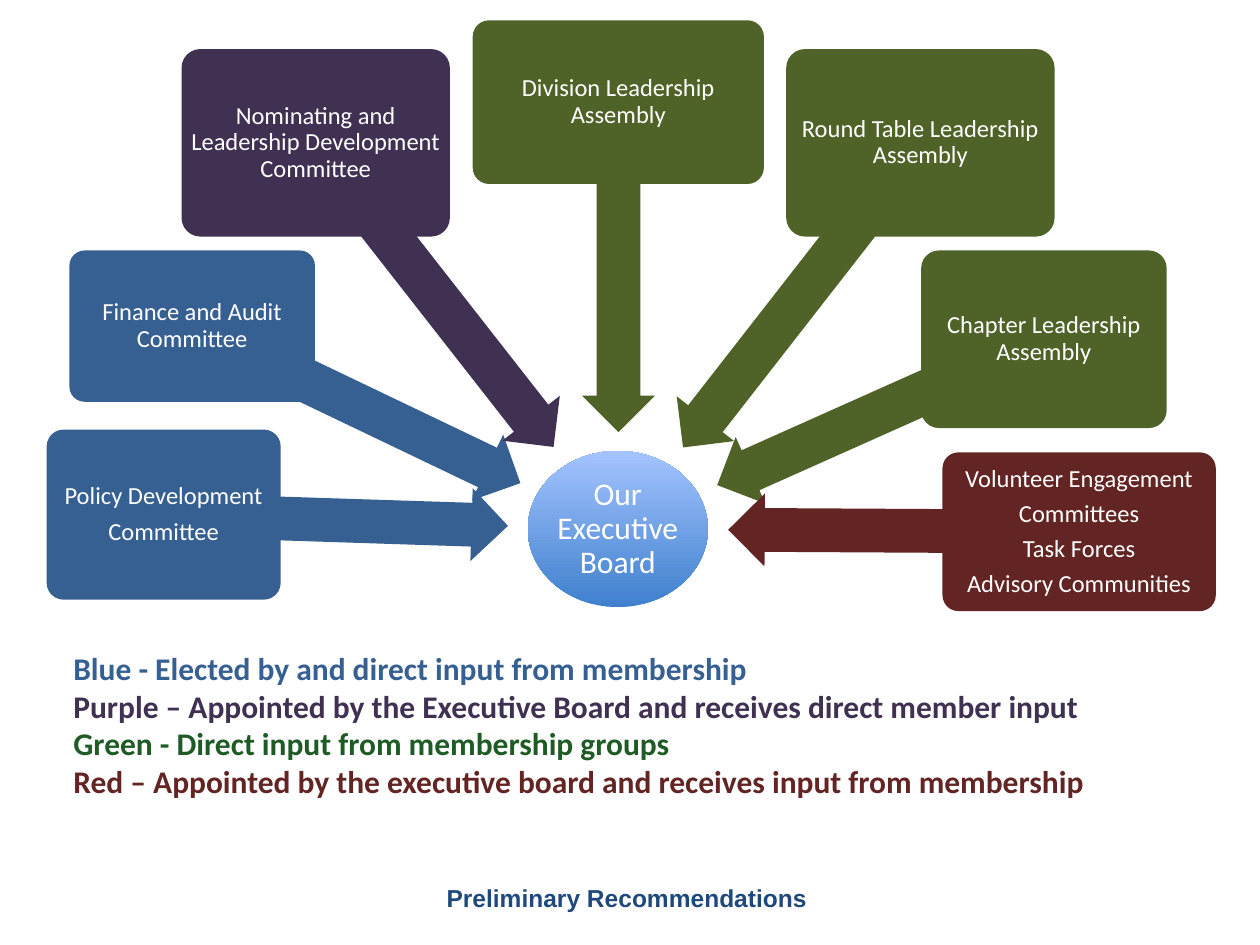
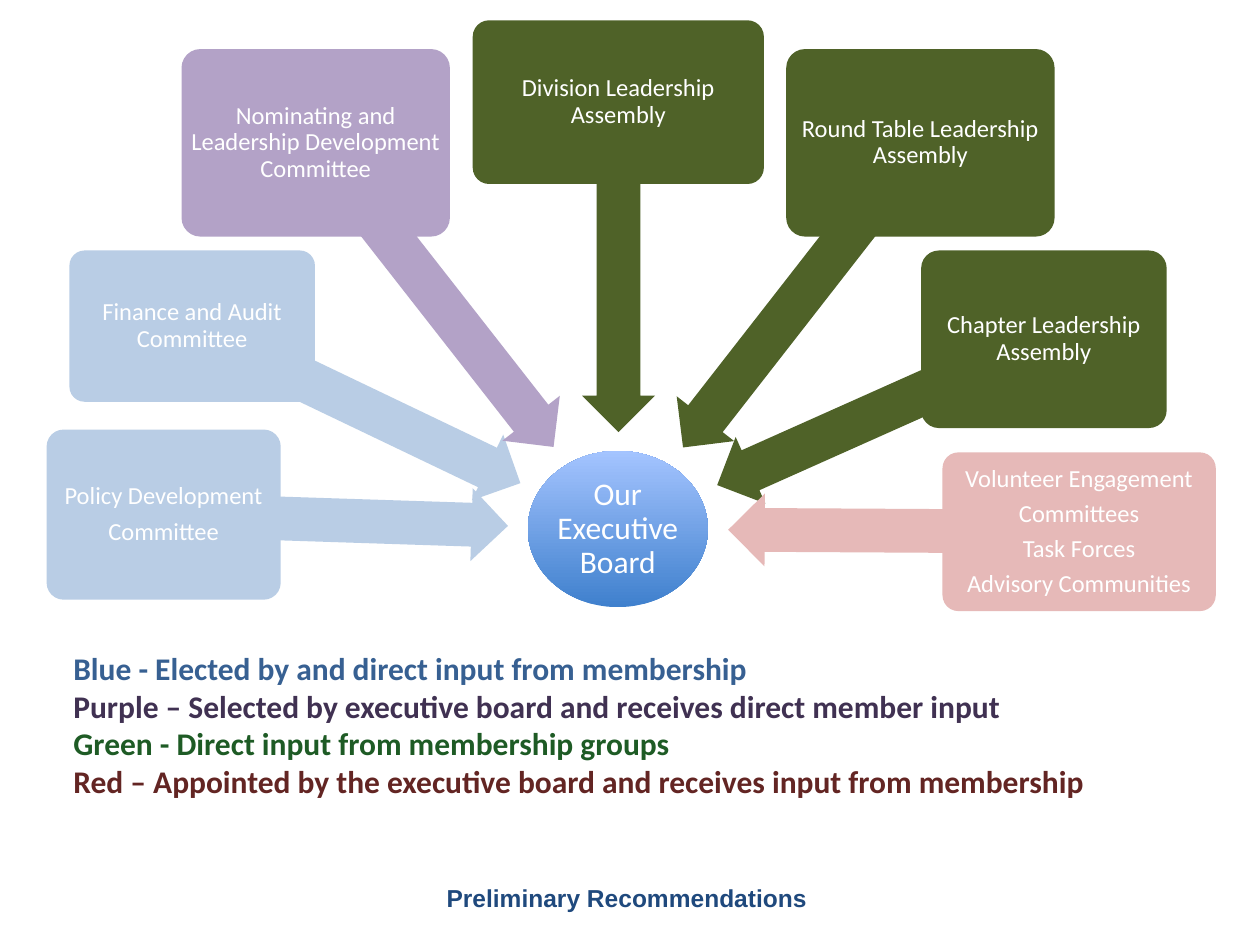
from dataclasses import dataclass
from math import atan2, degrees, hypot

from pptx import Presentation
from pptx.dml.color import RGBColor
from pptx.enum.shapes import MSO_SHAPE as SHAPE
from pptx.enum.text import MSO_ANCHOR as ANCHOR, PP_ALIGN as ALIGN
from pptx.util import Cm, Pt

WHITE = RGBColor(0xFF, 0xFF, 0xFF)
NAVY = RGBColor(0x1F, 0x49, 0x7D)
BLUE = RGBColor(0x37, 0x60, 0x92)
PURPLE = RGBColor(0x40, 0x31, 0x52)
GREEN = RGBColor(0x4F, 0x62, 0x28)
RED = RGBColor(0x63, 0x25, 0x23)
PALE_BLUE = RGBColor(0xB9, 0xCD, 0xE5)
PALE_PURPLE = RGBColor(0xB3, 0xA2, 0xC7)
PALE_RED = RGBColor(0xE6, 0xB9, 0xB8)
LEGEND_GREEN = RGBColor(0x1E, 0x5B, 0x25)
BOARD_BOTTOM = RGBColor(0x3F, 0x80, 0xCD)
BOARD_TOP = RGBColor(0xA4, 0xC4, 0xFF)

# Fill colour of each group of bodies, on the full and the muted slide
FULL = {"blue": BLUE, "purple": PURPLE, "green": GREEN, "red": RED}
MUTED = {"blue": PALE_BLUE, "purple": PALE_PURPLE, "green": GREEN, "red": PALE_RED}

BODY_FONT = "Calibri"
ARROW_WIDTH = 1.47


@dataclass
class Body:
    """A body that reports to the board; box and arrow tip in cm."""
    text: str
    group: str
    box: tuple
    tip: tuple


BODIES = [
    Body("Policy Development\nCommittee", "blue",
         (0.94, 8.66, 4.72, 3.43), (10.24, 10.6)),
    Body("Finance and Audit Committee", "blue",
         (1.4, 5.05, 4.95, 3.05), (10.49, 9.74)),
    Body("Nominating and Leadership Development Committee", "purple",
         (3.66, 0.99, 5.41, 3.78), (11.16, 9.01)),
    Body("Division Leadership Assembly", "green",
         (9.53, 0.41, 5.87, 3.3), (12.47, 8.71)),
    Body("Round Table Leadership Assembly", "green",
         (15.85, 0.99, 5.41, 3.78), (13.77, 9.02)),
    Body("Chapter Leadership Assembly", "green",
         (18.57, 5.05, 4.95, 3.58), (14.46, 9.78)),
    Body("Volunteer Engagement\nCommittees\nTask Forces\nAdvisory Communities", "red",
         (19, 9.12, 5.51, 3.2), (14.68, 10.68)),
]
BOARD_BOX = (10.64, 9.09, 3.63, 3.15)
LEGEND_BOX = (1.35, 12.95, 22.86, 3.76)
FOOTER_BOX = (8.41, 17.68, 8.59, 0.81)


def set_insets(tf, inset):
    tf.margin_left = tf.margin_right = tf.margin_top = tf.margin_bottom = Cm(inset)
    tf.word_wrap = True


def style_runs(p, size, color, font=BODY_FONT, bold=False):
    for r in p.runs:
        r.font.name, r.font.size, r.font.bold = font, Pt(size), bold
        r.font.color.rgb = color


def add_plain_shape(slide, kind, box):
    sp = slide.shapes.add_shape(kind, *map(Cm, box))
    sp.shadow.inherit = False
    sp.line.fill.background()
    return sp


def add_label(sp, text, size, inset):
    """Write centred white lines inside a shape."""
    tf = sp.text_frame
    tf.text = text
    set_insets(tf, inset)
    tf.vertical_anchor = ANCHOR.MIDDLE
    for p in tf.paragraphs:
        p.alignment = ALIGN.CENTER
        p.line_spacing = 0.9
        p.space_after = Pt(size * 0.35)
        style_runs(p, size, WHITE)


def add_arrow(slide, start, tip, color):
    """Draw a block arrow from start to tip."""
    dx, dy = tip[0] - start[0], tip[1] - start[1]
    length = hypot(dx, dy)
    left = (start[0] + tip[0] - length) / 2
    top = (start[1] + tip[1] - ARROW_WIDTH) / 2
    sp = add_plain_shape(slide, SHAPE.LEFT_ARROW, (left, top, length, ARROW_WIDTH))
    sp.adjustments[0], sp.adjustments[1] = 0.6, 0.5
    sp.rotation = degrees(atan2(dy, dx)) + 180
    sp.fill.solid()
    sp.fill.fore_color.rgb = color


def add_body(slide, body, color):
    left, top, width, height = body.box
    add_arrow(slide, (left + width / 2, top + height / 2), body.tip, color)
    sp = add_plain_shape(slide, SHAPE.ROUNDED_RECTANGLE, body.box)
    sp.adjustments[0] = 0.1
    sp.fill.solid()
    sp.fill.fore_color.rgb = color
    add_label(sp, body.text, 14, 0.06)


def add_board(slide, box):
    sp = add_plain_shape(slide, SHAPE.OVAL, box)
    sp.fill.gradient()
    sp.fill.gradient_angle = 90
    for stop, color in zip(sp.fill.gradient_stops, (BOARD_BOTTOM, BOARD_TOP)):
        stop.color.rgb = color
    add_label(sp, "Our Executive Board", 18, 0.03)


def add_legend(slide, box, purple_meaning):
    lines = [
        ("Blue - Elected by and direct input from membership", BLUE),
        (f"Purple – {purple_meaning} and receives direct member input", PURPLE),
        ("Green - Direct input from membership groups", LEGEND_GREEN),
        ("Red – Appointed by the executive board and receives input from membership", RED),
    ]
    tf = slide.shapes.add_textbox(*map(Cm, box)).text_frame
    tf.text = "\n".join(text for text, _ in lines)
    set_insets(tf, 0.13)
    for p, (_, color) in zip(tf.paragraphs, lines):
        style_runs(p, 18, color, bold=True)


def add_footer(slide, box):
    tf = slide.shapes.add_textbox(*map(Cm, box)).text_frame
    tf.text = "Preliminary Recommendations "
    set_insets(tf, 0.13)
    p = tf.paragraphs[0]
    p.alignment = ALIGN.CENTER
    style_runs(p, 14, NAVY, font="Arial", bold=True)


def add_board_slide(prs, colors, purple_meaning):
    slide = prs.slides.add_slide(prs.slide_layouts[6])
    add_footer(slide, FOOTER_BOX)
    add_board(slide, BOARD_BOX)
    for body in BODIES:
        add_body(slide, body, colors[body.group])
    add_legend(slide, LEGEND_BOX, purple_meaning)


def main():
    prs = Presentation()
    prs.slide_width, prs.slide_height = Cm(25.4), Cm(19.05)
    add_board_slide(prs, FULL, "Appointed by the Executive Board")
    add_board_slide(prs, MUTED, "Selected by executive board")
    prs.save("out.pptx")


if __name__ == "__main__":
    main()
